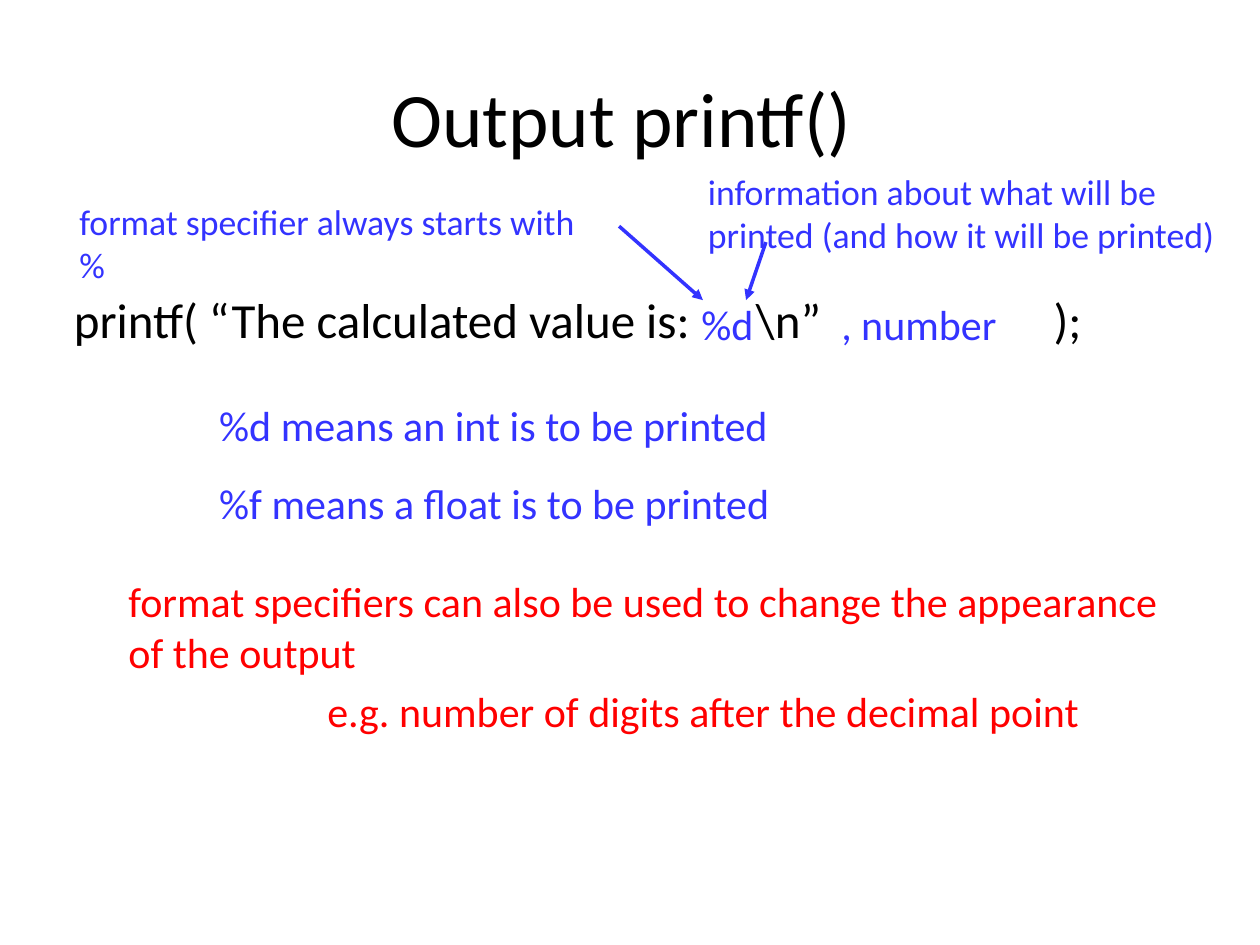
from lxml.etree import SubElement
from pptx import Presentation
from pptx.dml.color import RGBColor
from pptx.enum.shapes import MSO_CONNECTOR
from pptx.enum.text import MSO_ANCHOR, PP_ALIGN
from pptx.oxml.ns import qn
from pptx.util import Cm, Pt

COLORS = {"text": "000000", "accent": "3333FF", "warning": "FF0000"}
FONT = "Calibri"


def add_text(slide, box, runs, size, color, align=PP_ALIGN.LEFT, anchor=MSO_ANCHOR.TOP):
    """Add a one-paragraph text box; box is left, top, width, height in cm."""
    shape = slide.shapes.add_textbox(*map(Cm, box))
    frame = shape.text_frame
    frame.word_wrap = True
    frame.vertical_anchor = anchor
    paragraph = frame.paragraphs[0]
    paragraph.alignment = align
    for text in runs:
        run = paragraph.add_run()
        run.text = text
        run.font.name = FONT
        run.font.size = Pt(size)
        run.font.color.rgb = RGBColor.from_string(COLORS[color])
    return shape


def add_tab_stops(paragraph, stops):
    tab_list = SubElement(paragraph._p.get_or_add_pPr(), qn("a:tabLst"))
    for stop in stops:
        SubElement(tab_list, qn("a:tab"), pos=str(Cm(stop)), algn="l")


def add_arrow(slide, start, end):
    arrow = slide.shapes.add_connector(MSO_CONNECTOR.STRAIGHT, *map(Cm, start + end))
    arrow.line.color.rgb = RGBColor.from_string(COLORS["accent"])
    arrow.line.width = Pt(2)
    SubElement(arrow.line._get_or_add_ln(), qn("a:tailEnd"), type="triangle")
    SubElement(arrow._element.spPr, qn("a:effectLst"))
    return arrow


def add_title(slide, box):
    add_text(slide, box, ["Output printf() "], 44, "text", PP_ALIGN.CENTER, MSO_ANCHOR.MIDDLE)


def add_statement(slide, left, top, width, height):
    """Add the printf call, with its arguments set into the tabbed gaps."""
    code = add_text(slide, (left, top, width, height),
                    ["printf( “The calculated value is:", "\t\\n”", "\t);"], 28, "text")
    add_tab_stops(code.text_frame.paragraphs[0], (13.75, 19.75))
    for offset, argument_width, text in ((12.65, 2.11, "%d"), (15.47, 4.01, ", number")):
        add_text(slide, (left + offset, top + 0.17, argument_width, 1.47), [text], 24, "accent")


def add_meanings(slide, left, top, width, height):
    pitch = 1.58
    for row, text in enumerate(("%d means an int is to be printed",
                                "%f means a float is to be printed")):
        add_text(slide, (left, top + row * pitch, width, height - pitch), [text], 24, "accent")


def add_appearance_note(slide, left, top, width, height):
    note_height = 2.21
    add_text(slide, (left, top, width, note_height),
             ["format specifiers can also be used to change the appearance of the output"],
             24, "warning")
    add_text(slide, (left + 4.01, top + note_height, width - 4.93, height - note_height),
             ["e.g. number of digits after the decimal point"], 24, "warning")


def add_callouts(slide, left, top, width, height):
    """Add the two remarks above the statement and their arrows to %d."""
    text_width = 11.13
    bottom = top + height
    starts_with = add_text(slide, (left, top + 0.61, text_width, 1.3),
                           ["format specifier always starts with %"], 20.4, "accent")
    arrow = add_arrow(slide, (left + text_width, top + 1.26), (left + 12.82, bottom))
    arrow.begin_connect(starts_with, 3)
    add_text(slide, (left + width - text_width, top, text_width, 1.91),
             ["information about what will be printed (and how it will be printed)"],
             20.4, "accent")
    add_arrow(slide, (left + 14.09, top + 1.58), (left + 13.69, bottom))


def main():
    presentation = Presentation()
    presentation.slide_width, presentation.slide_height = Cm(25.4), Cm(19.05)
    slide = presentation.slides.add_slide(presentation.slide_layouts[6])
    add_title(slide, (1.27, 0.76, 22.86, 3.18))
    add_statement(slide, 1.24, 5.72, 22.2, 1.63)
    add_meanings(slide, 4.17, 7.92, 12.55, 2.93)
    add_appearance_note(slide, 2.34, 11.48, 21.64, 3.96)
    add_callouts(slide, 1.35, 3.3, 23.8, 2.75)
    presentation.save("out.pptx")


if __name__ == "__main__":
    main()
